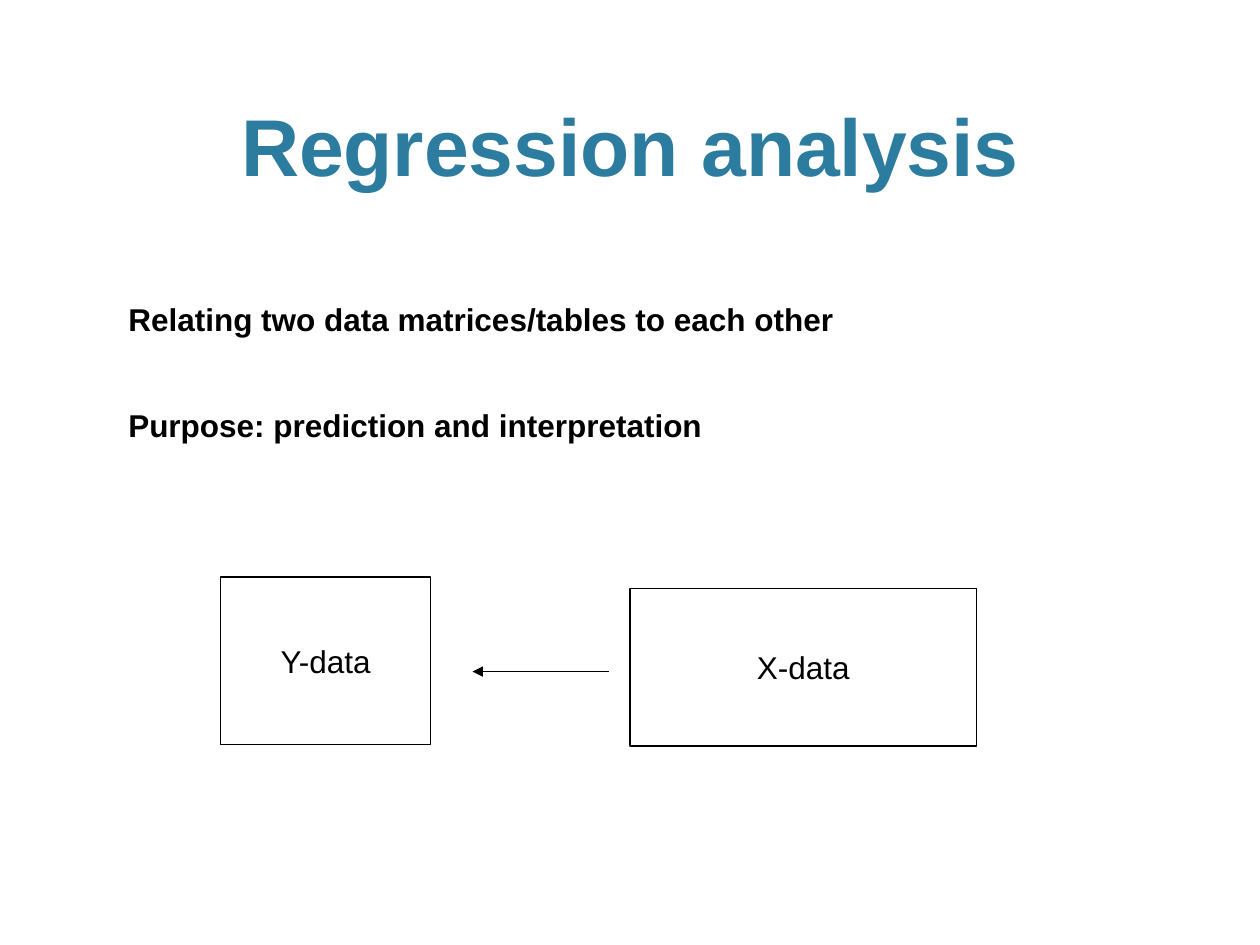
from lxml.etree import SubElement
from pptx import Presentation
from pptx.dml.color import RGBColor
from pptx.enum.shapes import MSO_CONNECTOR, MSO_SHAPE
from pptx.enum.text import MSO_ANCHOR, MSO_AUTO_SIZE, PP_ALIGN
from pptx.oxml.ns import qn
from pptx.util import Inches, Pt

TEAL = RGBColor(0x2C, 0x7C, 0x9F)
BLACK = RGBColor(0, 0, 0)
WHITE = RGBColor(255, 255, 255)
FONT = "Arial"
LINE_WIDTH = Pt(0.75)

TITLE = ("Regression analysis", (0.6, 0.12, 8.8, 1.46))
STATEMENTS = [
    ("Relating two data matrices/tables to each other", (0.92, 2.33, 6.88, 0.5)),
    ("Purpose: prediction and interpretation", (0.92, 3.17, 5.73, 0.5)),
]
DATA_BOXES = [
    ("Y-data", (1.75, 4.58, 1.67, 1.33)),
    ("X-data", (5, 4.67, 2.75, 1.25)),
]
ARROW = (4.83, 5.33, 3.75, 5.33)


def inches(values):
    return [Inches(value) for value in values]


def write(shape, text, size, color=BLACK, bold=False,
          alignment=PP_ALIGN.LEFT, anchor=MSO_ANCHOR.TOP):
    frame = shape.text_frame
    frame.word_wrap = True
    frame.auto_size = MSO_AUTO_SIZE.NONE
    frame.vertical_anchor = anchor
    paragraph = frame.paragraphs[0]
    paragraph.alignment = alignment
    run = paragraph.add_run()
    run.text = text
    run.font.name = FONT
    run.font.size = Pt(size)
    run.font.bold = bold
    run.font.color.rgb = color


def add_data_box(slide, text, place):
    box = slide.shapes.add_shape(MSO_SHAPE.RECTANGLE, *inches(place))
    box.shadow.inherit = False
    box.fill.background()
    box.line.color.rgb = BLACK
    box.line.width = LINE_WIDTH
    write(box, text, 18, alignment=PP_ALIGN.CENTER, anchor=MSO_ANCHOR.MIDDLE)


def add_arrow(slide, ends):
    arrow = slide.shapes.add_connector(MSO_CONNECTOR.STRAIGHT, *inches(ends))
    arrow.line.color.rgb = BLACK
    arrow.line.width = LINE_WIDTH
    properties = arrow.line._get_or_add_ln()
    SubElement(properties, qn("a:tailEnd"), type="triangle")
    SubElement(properties.getparent(), qn("a:effectLst"))


def main():
    presentation = Presentation()
    presentation.slide_width, presentation.slide_height = inches((10, 7.5))
    slide = presentation.slides.add_slide(presentation.slide_layouts[5])
    slide.background.fill.solid()
    slide.background.fill.fore_color.rgb = WHITE

    text, place = TITLE
    title = slide.shapes.title
    title.left, title.top, title.width, title.height = inches(place)
    write(title, text, 46, TEAL, True, PP_ALIGN.CENTER, MSO_ANCHOR.BOTTOM)

    for text, place in STATEMENTS:
        write(slide.shapes.add_textbox(*inches(place)), text, 18, bold=True)
    for text, place in DATA_BOXES:
        add_data_box(slide, text, place)
    add_arrow(slide, ARROW)
    presentation.save("out.pptx")


if __name__ == "__main__":
    main()
